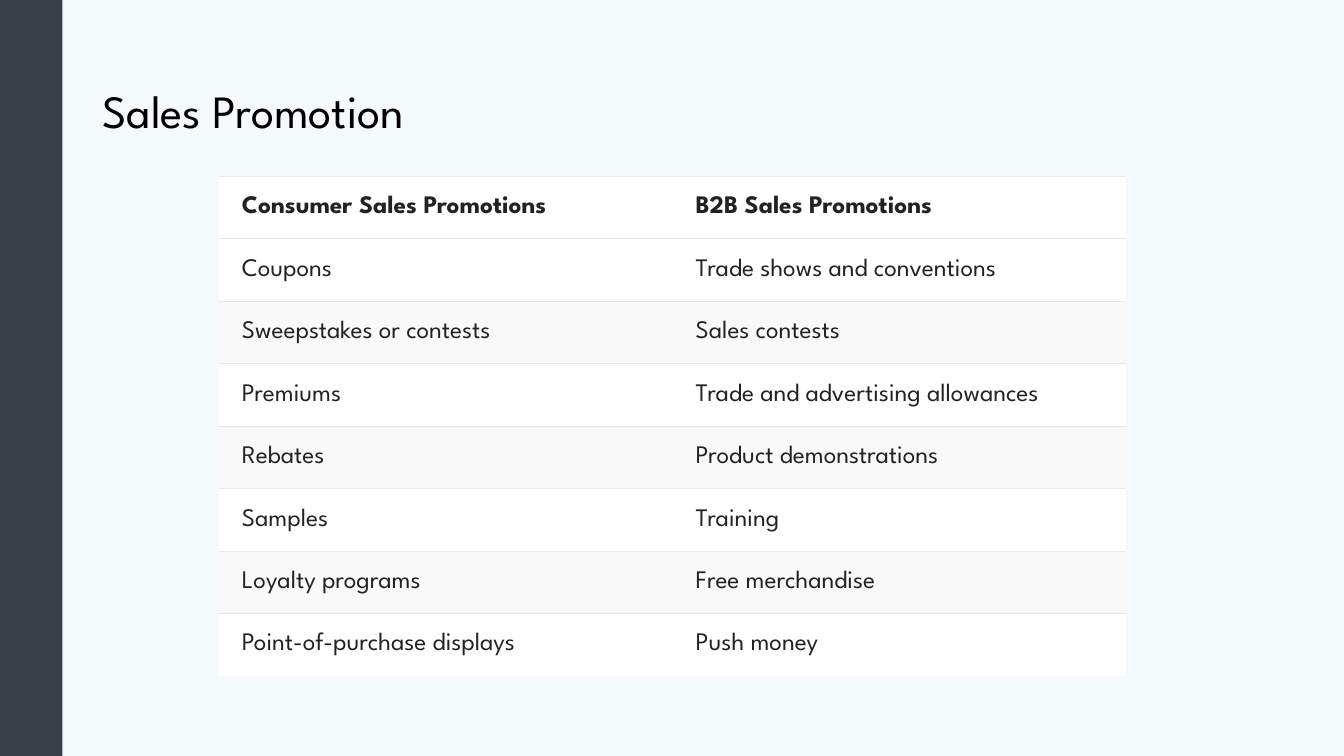
import dataclasses

import lxml.etree
import pptx
import pptx.dml.color
import pptx.enum.shapes
import pptx.enum.text
import pptx.oxml.ns
import pptx.util

Inches = pptx.util.Inches
Pt = pptx.util.Pt
qn = pptx.oxml.ns.qn


@dataclasses.dataclass(frozen=True)
class Theme:
    font: str = "League Spartan"
    background: str = "F4F9FC"
    sidebar: str = "3A4047"
    title: str = "000000"
    body: str = "222222"
    row: str = "FFFFFF"
    band: str = "F9F9F9"
    rule: str = "E7E7E7"
    title_size: float = 33
    body_size: float = 18
    rule_width: float = 0.75


THEME = Theme()

PROMOTIONS = [
    ("Consumer Sales Promotions", "B2B Sales Promotions"),
    ("Coupons", "Trade shows and conventions"),
    ("Sweepstakes or contests", "Sales contests"),
    ("Premiums", "Trade and advertising allowances"),
    ("Rebates", "Product demonstrations"),
    ("Samples", "Training"),
    ("Loyalty programs", "Free merchandise"),
    ("Point-of-purchase displays", "Push money"),
]


def paint(fill, color):
    fill.solid()
    fill.fore_color.rgb = pptx.dml.color.RGBColor.from_string(color)


def write_text(frame, text, *, size, color, bold=False, line_spacing=None):
    para = frame.paragraphs[0]
    para.line_spacing = line_spacing
    span = para.add_run()
    span.text = text
    span.font.name = THEME.font
    span.font.size = Pt(size)
    span.font.bold = bold
    span.font.color.rgb = pptx.dml.color.RGBColor.from_string(color)


def set_borders(cell, ruled_sides):
    properties = cell._tc.get_or_add_tcPr()
    for position, side in enumerate(("L", "R", "T", "B")):
        line = lxml.etree.Element(qn(f"a:ln{side}"))
        if side in ruled_sides:
            line.set("w", str(Pt(THEME.rule_width)))
            fill = lxml.etree.SubElement(line, qn("a:solidFill"))
            lxml.etree.SubElement(fill, qn("a:srgbClr"), val=THEME.rule)
        else:
            line.set("w", "0")
            lxml.etree.SubElement(line, qn("a:noFill"))
        properties.insert(position, line)


def add_sidebar(page, left, top, width, height):
    bar = page.shapes.add_shape(
        pptx.enum.shapes.MSO_SHAPE.RECTANGLE, left, top, width, height
    )
    bar.shadow.inherit = False
    paint(bar.fill, THEME.sidebar)
    bar.line.fill.background()


def add_title(page, text, left, top, width, height):
    box = page.shapes.add_textbox(left, top, width, height)
    frame = box.text_frame
    frame.word_wrap = True
    frame.vertical_anchor = pptx.enum.text.MSO_ANCHOR.MIDDLE
    write_text(
        frame, text, size=THEME.title_size, color=THEME.title, line_spacing=0.9
    )


def add_promotion_table(page, rows, left, top, width, height):
    table = page.shapes.add_table(
        len(rows), len(rows[0]), left, top, width, height
    ).table
    table.first_row = False
    table.horz_banding = False
    last = len(rows) - 1
    for index, labels in enumerate(rows):
        banded = index > 0 and index % 2 == 0
        for column, label in enumerate(labels):
            cell = table.cell(index, column)
            cell.margin_left = cell.margin_right = Inches(0.23)
            cell.margin_top = cell.margin_bottom = Inches(0.06)
            cell.vertical_anchor = pptx.enum.text.MSO_ANCHOR.MIDDLE
            paint(cell.fill, THEME.band if banded else THEME.row)
            set_borders(cell, "T" if index == last else "TB")
            write_text(
                cell.text_frame,
                label,
                size=THEME.body_size,
                color=THEME.body,
                bold=index == 0,
            )


def main():
    deck = pptx.Presentation()
    deck.slide_width = Inches(13.33)
    deck.slide_height = Inches(7.5)
    page = deck.slides.add_slide(deck.slide_layouts[6])
    paint(page.background.fill, THEME.background)
    add_sidebar(page, 0, 0, Inches(0.62), deck.slide_height)
    add_title(
        page, "Sales Promotion",
        Inches(0.92), Inches(0.4), Inches(11.5), Inches(1.45),
    )
    add_promotion_table(
        page, PROMOTIONS,
        Inches(2.17), Inches(1.75), Inches(9), Inches(0.62) * len(PROMOTIONS),
    )
    deck.save("out.pptx")


if __name__ == "__main__":
    main()
